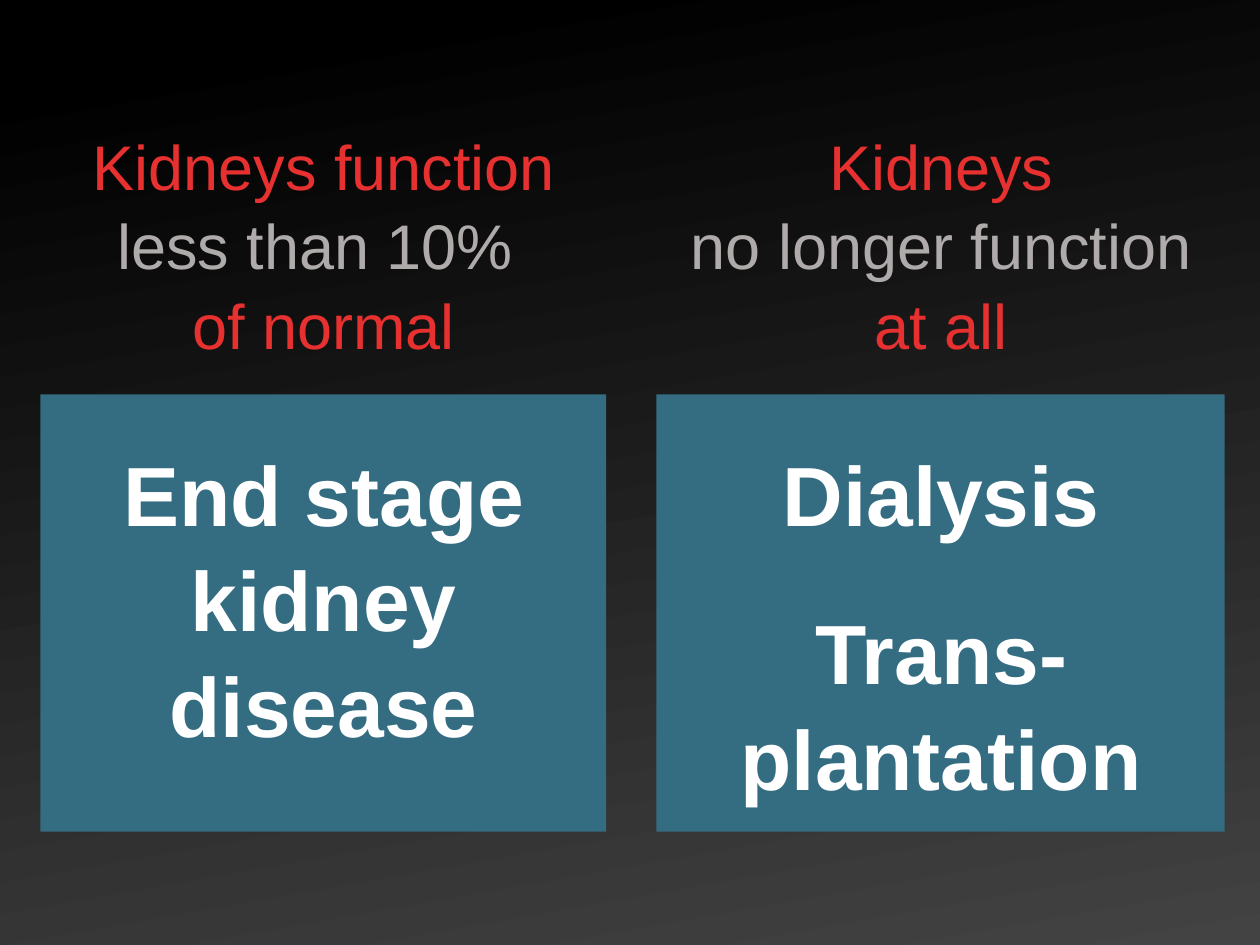
from pptx import Presentation
from pptx.dml.color import RGBColor
from pptx.enum.shapes import MSO_SHAPE
from pptx.enum.text import MSO_ANCHOR, PP_ALIGN
from pptx.util import Pt

RECTANGLE = MSO_SHAPE.RECTANGLE
TOP, BOTTOM = MSO_ANCHOR.TOP, MSO_ANCHOR.BOTTOM
CENTER = PP_ALIGN.CENTER

COLORS = {"red": "E63130", "gray": "AFABAB", "white": "FFFFFF", "panel": "346C81"}
GRADIENT = [(0.08, "000000"), (1, "434343")]

COLUMNS = [
    {
        "panel": (23.04, 323.28),
        "heading_box": (14.4, 341.28),
        "heading": ["Kidneys function", "less than 10% ", "of normal"],
        "outcome_box": (23.04, 181.44),
        "outcomes": [["End stage", "kidney disease"]],
    },
    {
        "panel": (375.12, 324.72),
        "heading_box": (383.76, 308.16),
        "heading": ["Kidneys", "no longer function", "at all"],
        "outcome_box": (375.84, 212.4),
        "outcomes": [["Dialysis"], ["Trans-", "plantation"]],
    },
]
HEADING_COLORS = ["red", "gray", "red"]
PANEL_TOP, PANEL_HEIGHT = 225.36, 249.84
HEADING_TOP, HEADING_HEIGHT = 72, 138.24
OUTCOME_TOP, OUTCOME_WIDTH = 246.24, 324


def add_text(shapes, paragraphs, box, colors, size, bold=False, anchor=TOP, gap=0):
    shape = shapes.add_textbox(*map(Pt, box))
    frame = shape.text_frame
    frame.word_wrap = True
    frame.vertical_anchor = anchor
    for index, lines in enumerate(paragraphs):
        paragraph = frame.add_paragraph() if index else frame.paragraphs[0]
        paragraph.alignment = CENTER
        paragraph.line_spacing = 1.05
        paragraph.space_before = Pt(gap if index else 0)
        paragraph.font.size = Pt(size)
        paragraph.font.name = "Arial"
        for number, line in enumerate(lines):
            if number:
                paragraph.add_line_break()
            run = paragraph.add_run()
            run.text = line
            run.font.name = "Arial"
            run.font.size = Pt(size)
            run.font.bold = bold
            run.font.color.rgb = RGBColor.from_string(COLORS[colors[number]])


def add_column(slide, column):
    shapes = slide.shapes.add_group_shape().shapes
    left, width = column["panel"]
    panel = shapes.add_shape(
        RECTANGLE, Pt(left), Pt(PANEL_TOP), Pt(width), Pt(PANEL_HEIGHT))
    panel.shadow.inherit = False
    panel.fill.solid()
    panel.fill.fore_color.rgb = RGBColor.from_string(COLORS["panel"])
    panel.line.fill.background()

    left, width = column["heading_box"]
    add_text(shapes, [column["heading"]], (left, HEADING_TOP, width, HEADING_HEIGHT),
             HEADING_COLORS, 36, anchor=BOTTOM)
    left, height = column["outcome_box"]
    add_text(shapes, column["outcomes"], (left, OUTCOME_TOP, OUTCOME_WIDTH, height),
             ["white", "white"], 48, bold=True, gap=30)


def main():
    presentation = Presentation()
    presentation.slide_width, presentation.slide_height = Pt(720), Pt(540)
    slide = presentation.slides.add_slide(presentation.slide_layouts[6])
    fill = slide.background.fill
    fill.gradient()
    fill.gradient_angle = 280
    for stop, (position, color) in zip(fill.gradient_stops, GRADIENT):
        stop.position = position
        stop.color.rgb = RGBColor.from_string(color)
    for column in COLUMNS:
        add_column(slide, column)
    presentation.save("out.pptx")


if __name__ == "__main__":
    main()
